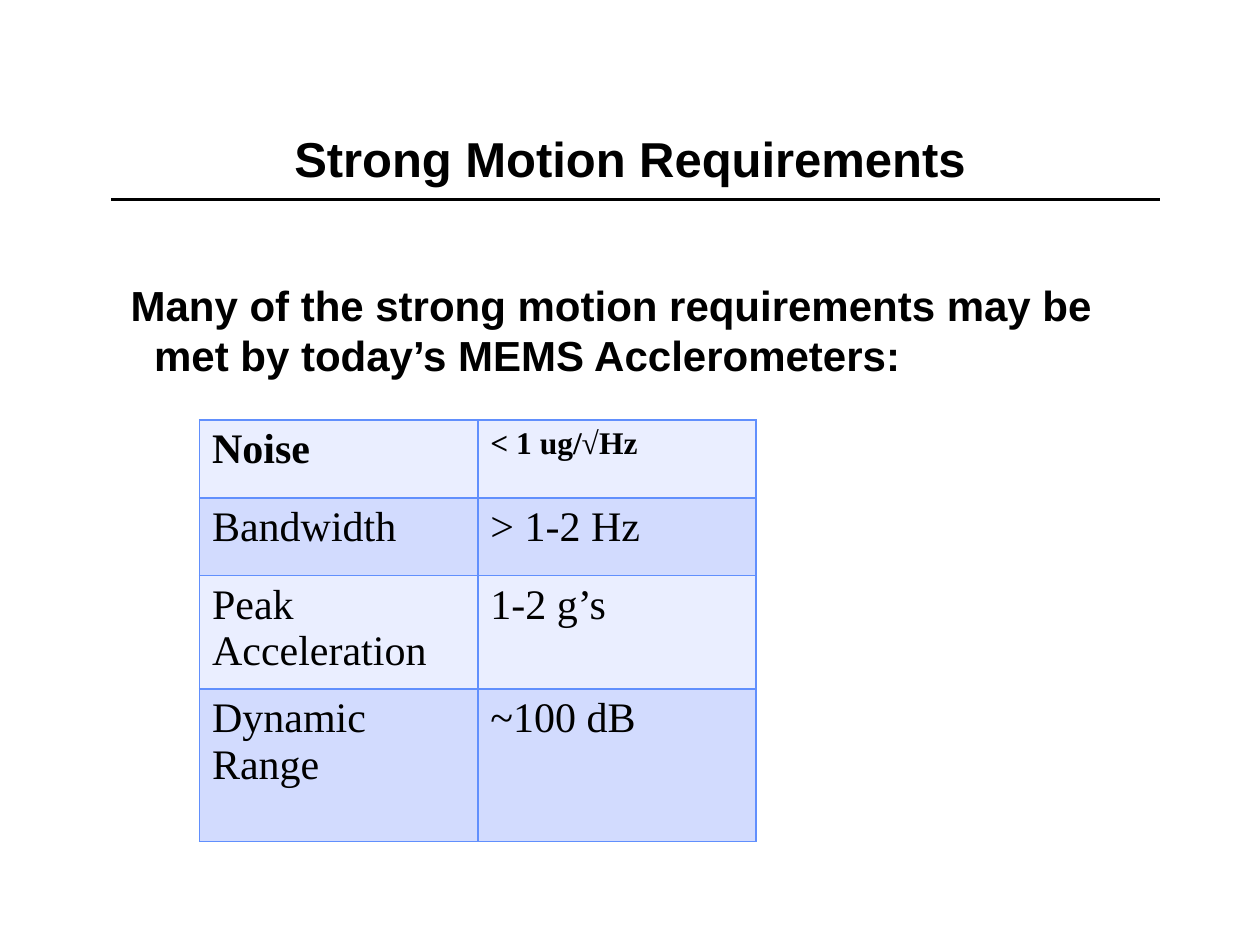
import pptx
import pptx.dml.color
import pptx.enum.shapes
import pptx.enum.text
import pptx.oxml
import pptx.oxml.ns
import pptx.util

Pt = pptx.util.Pt
ALIGN = pptx.enum.text.PP_ALIGN
ANCHOR = pptx.enum.text.MSO_ANCHOR
NS = pptx.oxml.ns.nsdecls("a")


def tint(code):
    return pptx.dml.color.RGBColor.from_string(code)


def write(frame, text, font="Arial", size=24, bold=True, color="000000",
          align=ALIGN.LEFT, left=0, hang=0):
    para = frame.paragraphs[0]
    para.alignment = align
    if left:
        props = para._p.get_or_add_pPr()
        props.set("marL", str(Pt(left)))
        props.set("indent", str(Pt(-hang)))
    run = para.add_run()
    run.text = text
    run.font.name = font
    run.font.size = Pt(size)
    run.font.bold = bold
    run.font.color.rgb = tint(color)


class Deck:
    ink = "000000"
    edge = "618FFD"
    bands = ("EAEEFF", "D2DBFE")
    serif = "Times New Roman"

    def __init__(self, wide, high):
        self.file = pptx.Presentation()
        self.file.slide_width = Pt(wide)
        self.file.slide_height = Pt(high)
        self.slide = self.file.slides.add_slide(self.file.slide_layouts[6])

    def rule(self, x1, x2, y, width):
        line = self.slide.shapes.add_connector(
            pptx.enum.shapes.MSO_CONNECTOR.STRAIGHT, Pt(x1), Pt(y), Pt(x2), Pt(y))
        line.line.color.rgb = tint(self.ink)
        line.line.width = Pt(width)
        line._element.spPr.append(pptx.oxml.parse_xml(f"<a:effectLst {NS}/>"))

    def text(self, box, words, anchor=ANCHOR.TOP, **style):
        frame = self.slide.shapes.add_textbox(*map(Pt, box)).text_frame
        frame.word_wrap = True
        frame.vertical_anchor = anchor
        write(frame, words, **style)

    def border(self, cell):
        props = cell._tc.get_or_add_tcPr()
        for side in "LRTB":
            props.append(pptx.oxml.parse_xml(
                f'<a:ln{side} {NS} w="{Pt(1)}"><a:solidFill>'
                f'<a:srgbClr val="{self.edge}"/></a:solidFill></a:ln{side}>'))

    def table(self, left, top, cols, highs, rows):
        grid = self.slide.shapes.add_table(
            len(rows), len(cols), Pt(left), Pt(top),
            Pt(sum(cols)), Pt(sum(highs))).table
        for col, width in zip(grid.columns, cols):
            col.width = Pt(width)
        for r, (high, row) in enumerate(zip(highs, rows)):
            grid.rows[r].height = Pt(high)
            for c, words in enumerate(row):
                cell = grid.cell(r, c)
                self.border(cell)
                cell.fill.solid()
                cell.fill.fore_color.rgb = tint(self.bands[r % 2])
                write(cell.text_frame, words, font=self.serif, bold=r == 0,
                      size=18 if (r, c) == (0, 1) else 24)


def main():
    deck = Deck(720, 540)

    # Heading and rule
    deck.rule(63.5, 663, 114, 2)
    deck.text((54, 42, 612, 96), "Strong Motion Requirements",
              anchor=ANCHOR.MIDDLE, size=28, align=ALIGN.CENTER)

    # Lead sentence
    deck.text((54, 156, 612, 324),
              "Many of the strong motion requirements may be met by "
              "today’s MEMS Acclerometers:", left=27, hang=13.5)

    # Requirements table
    deck.table(114, 240, (159, 159), (44.5, 44.5, 60.5, 87), (
        ("Noise", "< 1 ug/√Hz"),
        ("Bandwidth", "> 1-2 Hz"),
        ("Peak Acceleration", "1-2 g’s"),
        ("Dynamic Range", "~100 dB"),
    ))

    deck.file.save("out.pptx")


if __name__ == "__main__":
    main()
